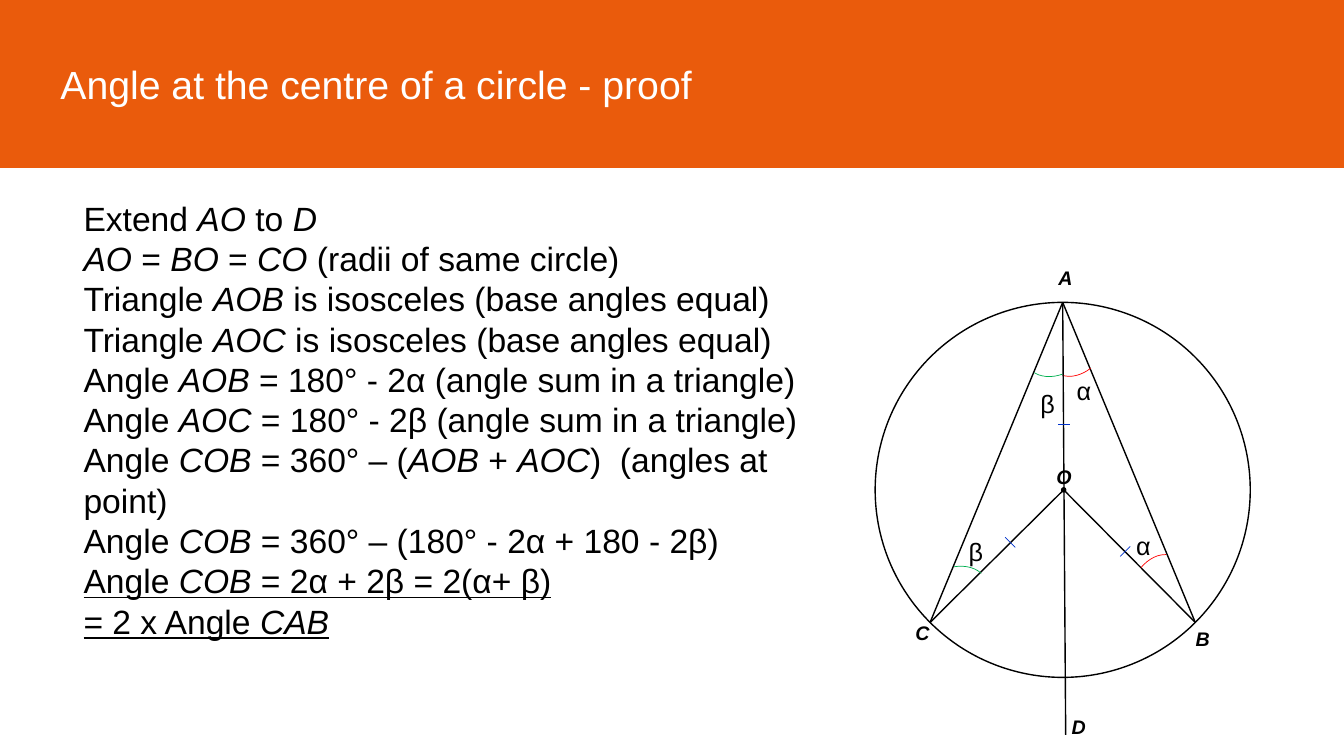
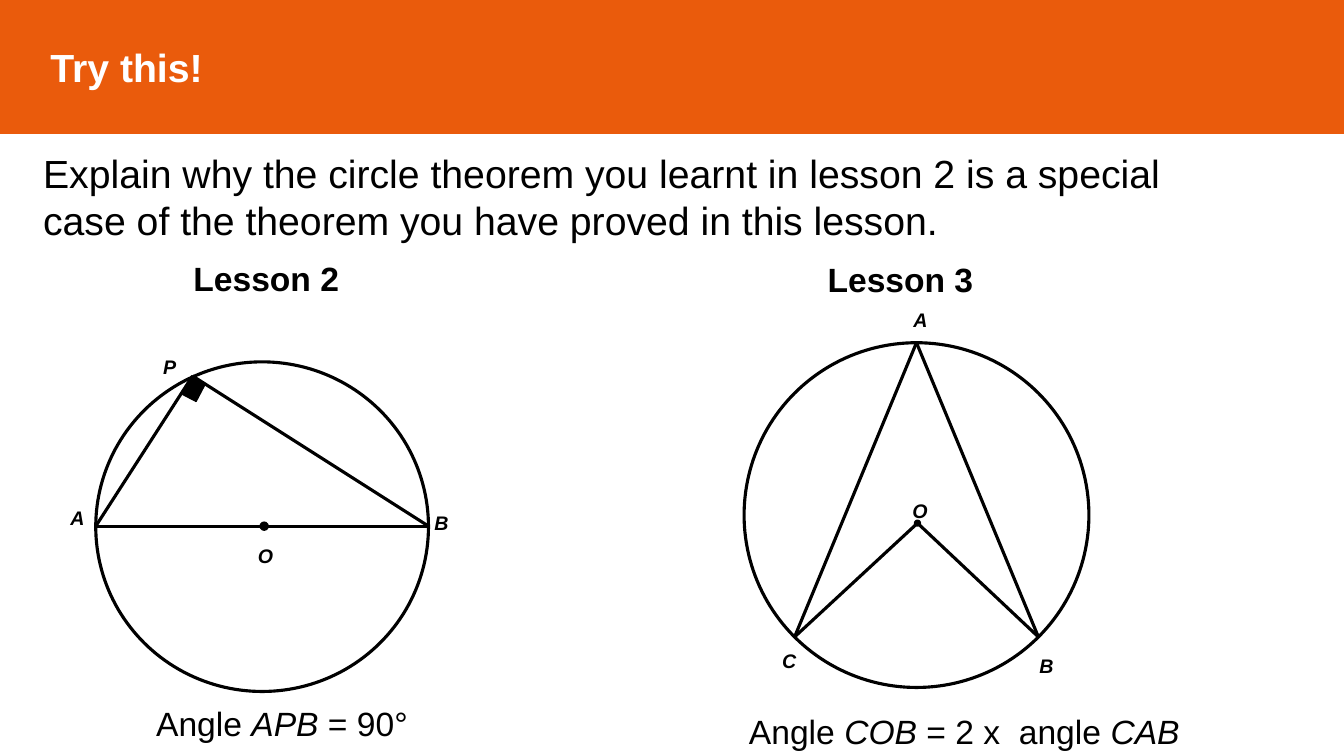
"""Build two slides on the angle at the centre of a circle."""
from dataclasses import dataclass
from math import sqrt

from lxml import etree
from pptx import Presentation
from pptx.dml.color import RGBColor
from pptx.enum.shapes import MSO_CONNECTOR, MSO_SHAPE
from pptx.enum.text import MSO_ANCHOR, PP_ALIGN
from pptx.oxml.ns import qn
from pptx.util import Inches, Pt

RECT = MSO_SHAPE.RECTANGLE
OVAL = MSO_SHAPE.OVAL
ARC = MSO_SHAPE.ARC
LINE = MSO_CONNECTOR.STRAIGHT
LEFT = PP_ALIGN.LEFT
TOP = MSO_ANCHOR.TOP
MIDDLE = MSO_ANCHOR.MIDDLE

WIDTH, HEIGHT = 13.33, 7.5
ORANGE, WHITE, BLACK = "EA5B0C", "FFFFFF", "000000"
BLUE, RED, GREEN = "0033CC", "FF0000", "00B050"
FONT = "Arial"
SWEEP = (174.56, 206.48)

PROOF = """Extend *AO* to *D*
*AO* = *BO* = *CO* (radii of same circle)
Triangle *AOB* is isosceles (base angles equal)
Triangle *AOC* is isosceles (base angles equal)
Angle *AOB* = 180° - 2α (angle sum in a triangle)
Angle *AOC* = 180° - 2β (angle sum in a triangle)
Angle *COB* = 360° – (*AOB* + *AOC*)  (angles at point)
Angle *COB* = 360° – (180° - 2α + 180 - 2β)
_Angle *COB* = 2α + 2β = 2(α+ β)
_= 2 x Angle *CAB*"""
TASK = ("Explain why the circle theorem you learnt in lesson 2 is a special "
        "case of the theorem you have proved in this lesson.")


@dataclass
class Label:
    text: str
    x: float
    y: float


@dataclass
class Tick:
    start: tuple[float, float]
    end: tuple[float, float]


@dataclass
class Arc:
    x: float
    y: float
    turn: float
    tint: str


@dataclass
class Kite:
    x: float
    y: float
    radius: float
    drop: float
    weight: float
    labels: list[Label]


def paint(tint: str) -> RGBColor:
    return RGBColor.from_string(tint)


def write(frame, text: str, *, size: float, tint: str = BLACK,
          bold: bool = False, slant: bool = False, anchor=TOP) -> None:
    frame.word_wrap = True
    frame.vertical_anchor = anchor
    for row, line in enumerate(text.split("\n")):
        para = frame.add_paragraph() if row else frame.paragraphs[0]
        para.alignment = LEFT
        for part, piece in enumerate(line.removeprefix("_").split("*")):
            if not piece:
                continue
            run = para.add_run()
            run.text = piece
            font = run.font
            font.name, font.size = FONT, Pt(size)
            font.bold, font.italic = bold, slant or part % 2 == 1
            font.underline = line.startswith("_")
            font.color.rgb = paint(tint)


def place(shapes, text: str, x: float, y: float, w: float, h: float, **style) -> None:
    box = shapes.add_textbox(Inches(x), Inches(y), Inches(w), Inches(h))
    write(box.text_frame, text, **style)


def draw(shapes, kind, x: float, y: float, w: float, h: float, *,
         fill: str = "", tint: str = BLACK, weight: float = 1, turn: float = 0):
    shape = shapes.add_shape(kind, Inches(x), Inches(y), Inches(w), Inches(h))
    shape.shadow.inherit = False
    shape.rotation = turn
    if fill:
        shape.fill.solid()
        shape.fill.fore_color.rgb = paint(fill)
    else:
        shape.fill.background()
    shape.line.color.rgb = paint(tint)
    shape.line.width = Pt(weight)
    return shape


def link(shapes, start: tuple[float, float], end: tuple[float, float], *,
         tint: str = BLACK, weight: float = 1) -> None:
    line = shapes.add_connector(LINE, *map(Inches, start + end))
    line.line.color.rgb = paint(tint)
    line.line.width = Pt(weight)
    etree.SubElement(line._element.spPr, qn("a:effectLst"))


def dot(shapes, x: float, y: float, size: float, weight: float = 1) -> None:
    draw(shapes, OVAL, x - size / 2, y - size / 2, size, size,
         fill=BLACK, weight=weight)


def name(shapes, labels: list[Label]) -> None:
    for label in labels:
        place(shapes, label.text, label.x, label.y, 0.34, 0.34,
              size=14, bold=True, slant=True)


def band(slide, title: str, height: float, inset: float, bold: bool = False) -> None:
    bar = draw(slide.shapes, RECT, 0, 0, WIDTH, height, fill=ORANGE, tint=ORANGE)
    bar.text_frame.margin_left = Inches(inset)
    write(bar.text_frame, title, size=28, tint=WHITE, bold=bold, anchor=MIDDLE)


def sketch(slide, kite: Kite) -> None:
    shapes = slide.shapes.add_group_shape().shapes
    side, reach = 2 * kite.radius, kite.radius / sqrt(2)
    draw(shapes, OVAL, kite.x - kite.radius, kite.y - kite.radius, side, side,
         weight=kite.weight)
    apex = (kite.x, kite.y - kite.radius)
    heart = (kite.x + 0.01, kite.y + kite.drop)
    dot(shapes, *heart, 0.04, kite.weight)
    for top in (heart, apex):
        for sign in (-1, 1):
            foot = (kite.x + sign * reach, kite.y + reach)
            link(shapes, foot, top, weight=kite.weight)
    name(shapes, kite.labels)


def prove(slide) -> None:
    shapes = slide.shapes
    band(slide, "Angle at the centre of a circle - proof", 1.66, 0.6)
    place(shapes, PROOF, 0.73, 1.91, 7.72, 4.54, size=24)
    sketch(slide, Kite(10.54, 4.86, 1.86, 0, 1, [
        Label("C", 8.98, 6.11), Label("B", 11.76, 6.17),
        Label("A", 10.4, 2.59), Label("O", 10.38, 4.56)]))
    link(shapes, (10.54, 3), (10.57, 7.29))
    name(shapes, [Label("D", 10.53, 7.04)])
    for tick in (Tick((11.21, 5.42), (11.11, 5.52)),
                 Tick((10.61, 4.21), (10.49, 4.21)),
                 Tick((10.07, 5.43), (9.97, 5.33))):
        link(shapes, tick.start, tick.end, tint=BLUE, weight=0.5)
    for arc in (Arc(11.15, 5.57, 297.5, RED), Arc(10.34, 3.16, 129.5, RED),
                Arc(10.14, 3.19, 148.5, GREEN), Arc(9.12, 5.63, 338.7, GREEN)):
        curve = draw(shapes, ARC, arc.x, arc.y, 0.69, 0.52,
                     tint=arc.tint, weight=0.5, turn=arc.turn)
        curve.adjustments[0], curve.adjustments[1] = SWEEP
    for label in (Label("α", 10.58, 3.67), Label("α", 11.17, 5.21),
                  Label("β", 10.22, 3.8), Label("β", 9.51, 5.27)):
        place(shapes, label.text, label.x, label.y, 0.36, 0.4, size=18)


def compare(slide) -> None:
    shapes = slide.shapes
    band(slide, "Try this!", 1.32, 0.5, bold=True)
    place(shapes, TASK, 0.33, 1.43, 11.86, 1.04, size=28)
    place(shapes, "Lesson 2", 1.82, 2.51, 2.34, 0.5, size=24, bold=True)
    place(shapes, "Lesson 3", 8.11, 2.52, 2.34, 0.5, size=24, bold=True)

    group = shapes.add_group_shape().shapes
    draw(group, OVAL, 0.95, 3.59, 3.3, 3.27, fill=WHITE, weight=2.25)
    left, peak, right = (0.95, 5.22), (1.91, 3.73), (4.25, 5.22)
    for start, end in ((left, peak), (peak, right), (left, right)):
        link(group, start, end, weight=2.25)
    draw(group, RECT, 1.85, 3.76, 0.15, 0.2, fill=BLACK, turn=27.6)
    dot(group, 2.62, 5.22, 0.08)
    name(group, [Label("A", 0.6, 4.97), Label("P", 1.52, 3.47),
                 Label("B", 4.21, 5.02), Label("O", 2.46, 5.35)])
    place(shapes, "Angle *APB* = 90°", 1.45, 6.92, 3.19, 0.5, size=24)

    sketch(slide, Kite(9.09, 5.11, 1.71, 0.08, 2.25, [
        Label("C", 7.66, 6.39), Label("B", 10.21, 6.44),
        Label("A", 8.96, 3.01), Label("O", 8.95, 4.9)]))
    place(shapes, "Angle *COB* = 2 x  angle *CAB*", 7.33, 7, 4.51, 0.5, size=24)


def main() -> None:
    deck = Presentation()
    deck.slide_width, deck.slide_height = Inches(WIDTH), Inches(HEIGHT)
    for build in (prove, compare):
        build(deck.slides.add_slide(deck.slide_layouts[6]))
    deck.save("out.pptx")


if __name__ == "__main__":
    main()
